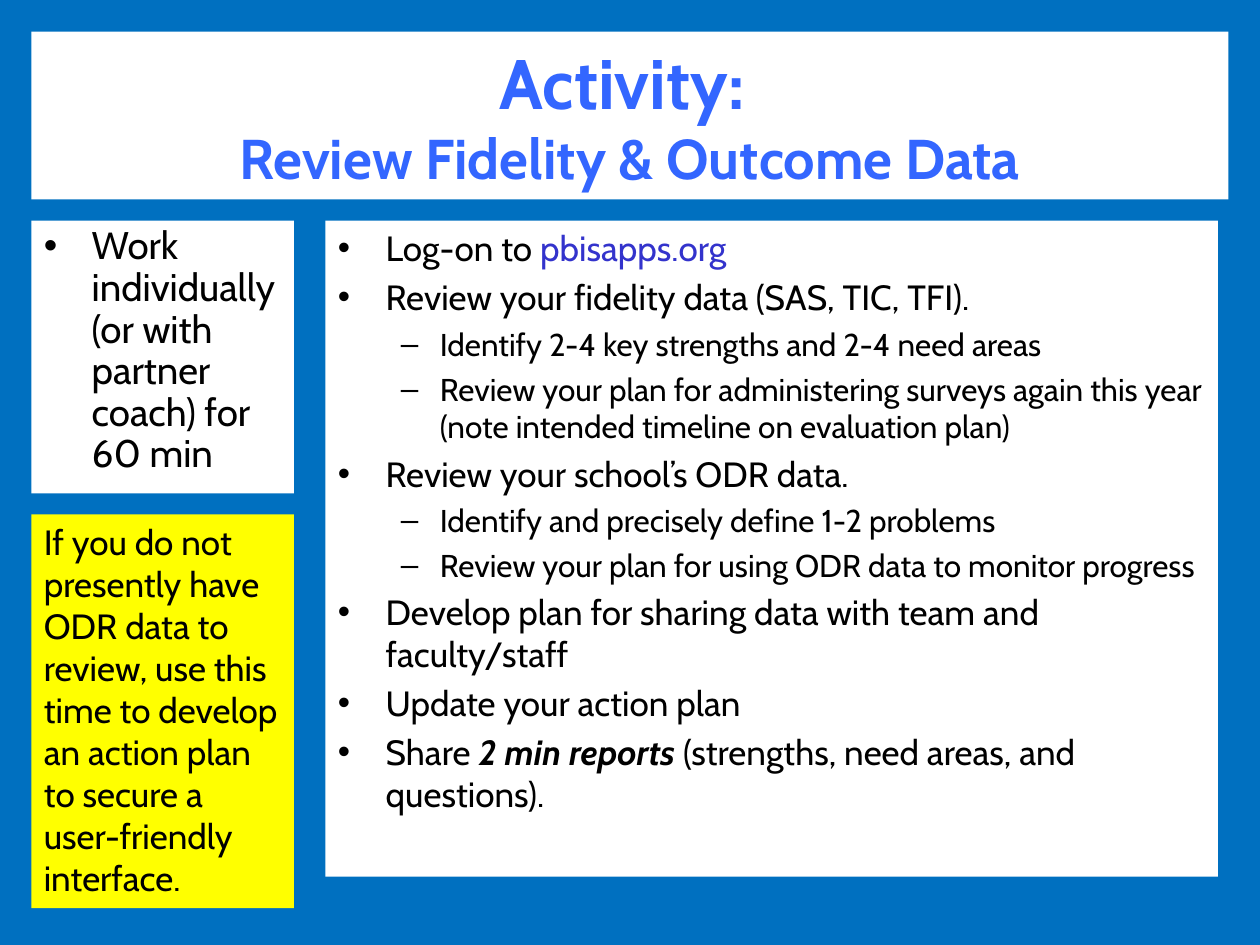
from lxml.etree import SubElement
from pptx import Presentation
from pptx.dml.color import RGBColor
from pptx.enum.text import MSO_ANCHOR as Anchor, PP_ALIGN as Align
from pptx.oxml.ns import qn
from pptx.util import Inches, Pt

COLUMNS, ROWS = 120, 90
UNIT = Inches(10) // COLUMNS
FONT = "Cabin"
BLACK, WHITE, YELLOW = "000000", "FFFFFF", "FFFF00"
BACKGROUND, TITLE_BLUE, LINK_BLUE = "0070C0", "3366FF", "3333CC"
LEVELS = [("•", 0.38, 0.38, 20), ("–", 0.81, 0.31, 18)]
STEPS = [
    (0, "Log-on to ", "pbisapps.org"),
    (0, "Review your fidelity data (SAS, TIC, TFI)."),
    (1, "Identify 2-4 key strengths and 2-4 need areas"),
    (1, "Review your plan for administering surveys again this year "
        "(note intended timeline on evaluation plan)"),
    (0, "Review your school’s ODR data."),
    (1, "Identify and precisely define 1-2 problems"),
    (1, "Review your plan for using ODR data to monitor progress"),
    (0, "Develop plan for sharing data with team and faculty/staff"),
    (0, "Update your action plan"),
    (0, "Share ", "2 min reports ", "(strengths, need areas, and questions)."),
]


def set_colour(fill, value):
    fill.solid()
    fill.fore_color.rgb = RGBColor.from_string(value)


def add_panel(page, column, row, width, height, colour):
    box = page.shapes.add_textbox(*(int(UNIT * n) for n in (column, row, width, height)))
    set_colour(box.fill, colour)
    box.text_frame.word_wrap = True
    return box.text_frame


def style_span(span, size, colour=BLACK, bold=False, italic=False):
    font = span.font
    font.name, font.size = FONT, Pt(size)
    font.bold, font.italic = bold, italic
    set_colour(font.fill, colour)


def add_spans(para, texts, size):
    for text in texts:
        span = para.add_run()
        span.text = text
        style_span(span, size)


def set_bullet(para, level):
    symbol, left, hanging, size = LEVELS[level]
    para.level = level
    properties = para._p.get_or_add_pPr()
    properties.set("marL", str(Inches(left)))
    properties.set("indent", str(-Inches(hanging)))
    SubElement(properties, qn("a:buFont"), typeface="Arial")
    SubElement(properties, qn("a:buChar"), char=symbol)
    return size


def add_title(page):
    frame = add_panel(page, 3, 3, 114, 16, WHITE)
    frame.vertical_anchor = Anchor.MIDDLE
    para = frame.paragraphs[0]
    para.alignment = Align.CENTER
    add_spans(para, ["Activity: "], 40)
    para.add_line_break()
    add_spans(para, ["Review Fidelity & Outcome Data"], 32)
    for span, size in zip(para.runs, (40, 32)):
        style_span(span, size, TITLE_BLUE, bold=True)


def add_note(page, row, height, colour, text, size):
    frame = add_panel(page, 3, row, 25, height, colour)
    frame.text = text
    para = frame.paragraphs[0]
    style_span(para.runs[0], size)
    return para


def add_steps(page):
    frame = add_panel(page, 31, 21, 85, 62.5, WHITE)
    for index, (level, *texts) in enumerate(STEPS):
        para = frame.add_paragraph() if index else frame.paragraphs[0]
        size = set_bullet(para, level)
        para.space_after = Pt(4)
        add_spans(para, texts, size)
    style_span(frame.paragraphs[0].runs[1], 20, LINK_BLUE)
    style_span(frame.paragraphs[-1].runs[1], 20, bold=True, italic=True)


def main():
    deck = Presentation()
    deck.slide_width, deck.slide_height = UNIT * COLUMNS, UNIT * ROWS
    page = deck.slides.add_slide(deck.slide_layouts[6])
    set_colour(page.background.fill, BACKGROUND)
    work = add_note(page, 21, 26, WHITE,
                    "Work individually (or with partner coach) for 60 min", 22)
    set_bullet(work, 0)
    work.line_spacing = 0.9
    add_title(page)
    add_steps(page)
    add_note(page, 49, 37.5, YELLOW,
             "If you do not presently have ODR data to review, use this time "
             "to develop an action plan to secure a user-friendly interface.", 20)
    deck.save("out.pptx")


if __name__ == "__main__":
    main()
